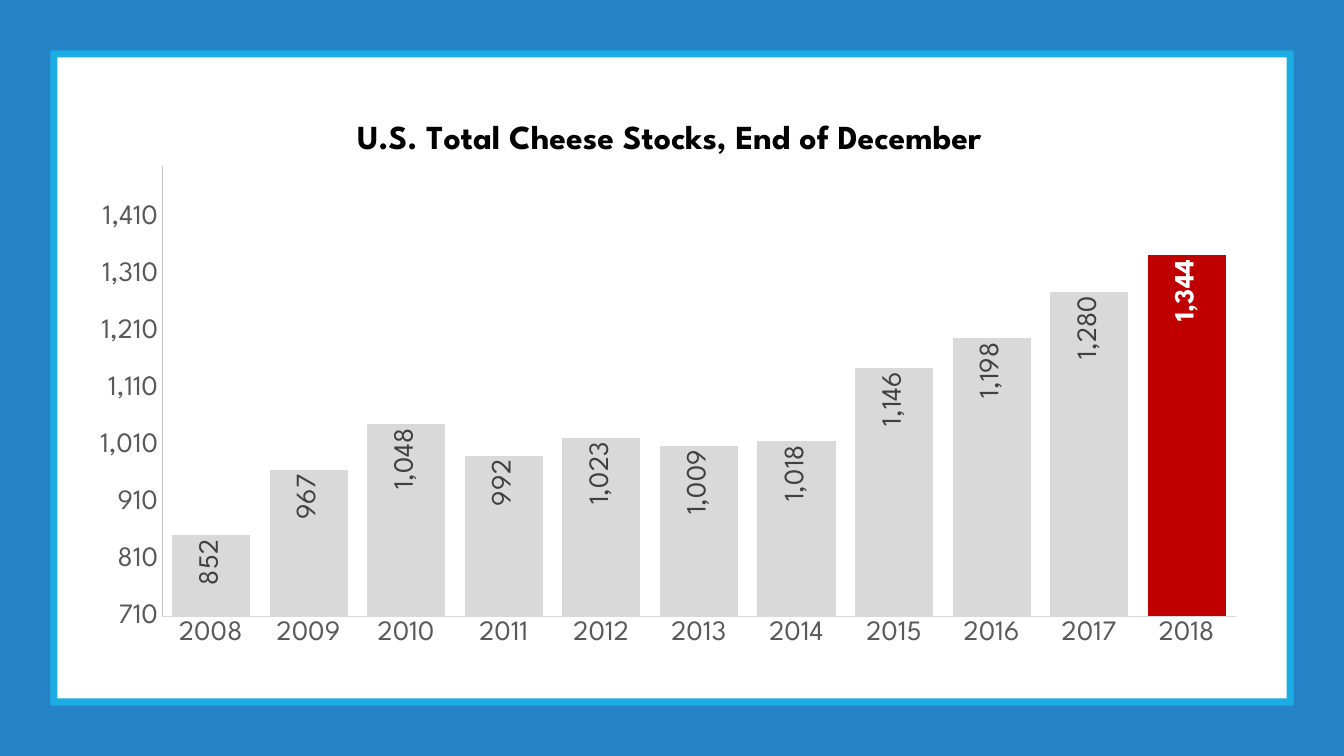
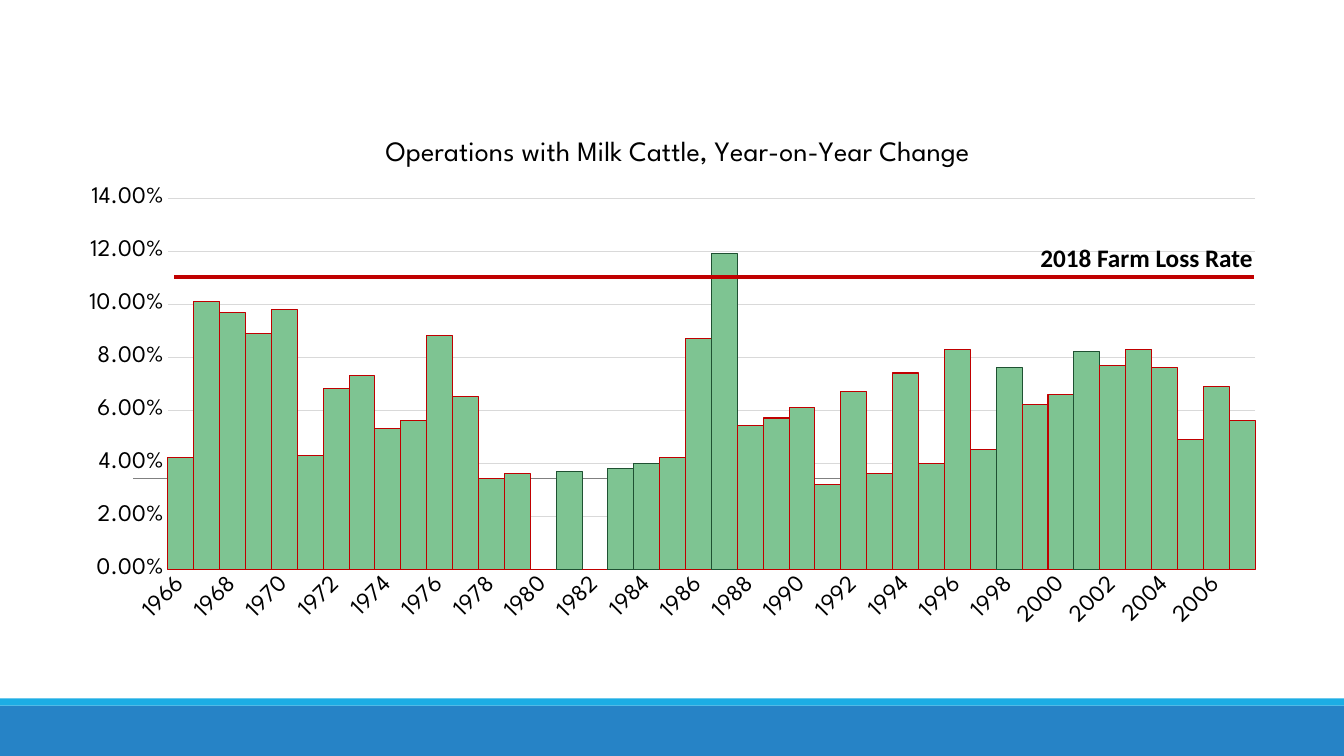
from lxml import etree
from pptx import Presentation
from pptx.chart.data import CategoryChartData
from pptx.dml.color import RGBColor
from pptx.enum import chart as charts, shapes
from pptx.oxml import ns
from pptx.util import Inches, Pt

# Content
CHEESE_YEARS = range(2008, 2019)
CHEESE_STOCKS = [852, 967, 1048, 992, 1023, 1009, 1018, 1146, 1198, 1280, 1344]
FARM_YEARS = range(1966, 2008)
FARM_CHANGE = [
    0.042, 0.101, 0.097, 0.089, 0.098, 0.043, 0.068, 0.073, 0.053, 0.056, 0.088,
    0.065, 0.034, 0.036, 0, 0.037, 0, 0.038, 0.04, 0.042, 0.087, 0.119, 0.054,
    0.057, 0.061, 0.032, 0.067, 0.036, 0.074, 0.04, 0.083, 0.045, 0.076, 0.062,
    0.066, 0.082, 0.077, 0.083, 0.076, 0.049, 0.069, 0.056]
DARK_EDGED_YEARS = [1981, 1983, 1984, 1987, 1998, 2001]

# Shared style
FONT = "League Spartan"
COLORS = {
    "blue": "2683C6", "cyan": "1CADE4", "white": "FFFFFF", "black": "000000",
    "red": "C00000", "bar": "D9D9D9", "green": "7EC492", "dark_green": "1F5132",
    "axis": "BFBFBF", "rule": "808080", "tick": "595959", "label": "404040"}
WIDTH, HEIGHT = 13.33, 7.5


def color(name):
    return RGBColor.from_string(COLORS[name])


def style_font(font, size, tint="black", bold=False, name=FONT):
    font.name, font.size, font.bold = name, Pt(size), bold
    font.color.rgb = color(tint)


def write(frame, text, **style):
    span = frame.paragraphs[0].add_run()
    span.text = text
    style_font(span.font, **style)


def style_line(line, tint, width=0.75):
    line.color.rgb = color(tint)
    line.width = Pt(width)


def add_box(page, left, top, width, height, tint):
    box = page.shapes.add_shape(shapes.MSO_SHAPE.RECTANGLE, Inches(left),
                                Inches(top), Inches(width), Inches(height))
    box.shadow.inherit = False
    box.fill.solid()
    box.fill.fore_color.rgb = color(tint)
    box.line.fill.background()


def add_rule(page, left, right, y, tint, width):
    rule = page.shapes.add_connector(shapes.MSO_CONNECTOR.STRAIGHT, Inches(left),
                                     Inches(y), Inches(right), Inches(y))
    style_line(rule.line, tint, width)
    etree.SubElement(rule.element.spPr, ns.qn("a:effectLst"))


def set_layout(parent, index, inner=False, **fractions):
    """Place a chart part by fractions of the chart's size."""
    for old in parent.findall(ns.qn("c:layout")):
        parent.remove(old)
    layout = etree.Element(ns.qn("c:layout"))
    manual = etree.SubElement(layout, ns.qn("c:manualLayout"))
    settings = {"layoutTarget": "inner"} if inner else {}
    settings.update(xMode="edge", yMode="edge", **fractions)
    for tag, value in settings.items():
        etree.SubElement(manual, ns.qn("c:" + tag)).set("val", str(value))
    parent.insert(index, layout)


def rotate_text(chart, query, degrees):
    for body in chart.element.xpath(query + "//a:bodyPr"):
        body.set("rot", str(degrees * 60000))
        body.set("vert", "horz")


def add_columns(page, area, years, values, title, title_at, plot_at, size,
                title_size, bold, tick, scale, number_format, gap, overlap, fill):
    """Add a one-series column chart; scale is minimum, maximum, step."""
    data = CategoryChartData(number_format=number_format)
    data.categories = [str(year) for year in years]
    data.add_series("Series 1", values)
    chart = page.shapes.add_chart(charts.XL_CHART_TYPE.COLUMN_CLUSTERED,
                                  *map(Inches, area), data).chart
    style_font(chart.font, size)
    chart.has_legend = False

    chart.has_title = True
    write(chart.chart_title.text_frame, title, size=title_size, bold=bold)
    set_layout(chart.element.xpath("c:chart/c:title")[0], 1,
               **dict(zip("xy", title_at)))
    set_layout(chart.element.xpath("c:chart/c:plotArea")[0], 0, inner=True,
               **dict(zip("xywh", plot_at)))

    for axis in (chart.category_axis, chart.value_axis):
        axis.major_tick_mark = axis.minor_tick_mark = charts.XL_TICK_MARK.NONE
        axis.has_major_gridlines = False
        style_font(axis.tick_labels.font, size, tick)
    style_line(chart.category_axis.format.line, "bar")
    axis = chart.value_axis
    axis.minimum_scale, axis.maximum_scale, axis.major_unit = scale
    axis.tick_labels.number_format = number_format
    axis.tick_labels.number_format_is_linked = False

    plot = chart.plots[0]
    plot.vary_by_categories = False
    plot.gap_width, plot.overlap = gap, overlap
    series = plot.series[0]
    series.invert_if_negative = False
    series.format.fill.solid()
    series.format.fill.fore_color.rgb = color(fill)
    return chart, series


def build_cheese(page):
    # Framed white card
    add_box(page, 0, 0, WIDTH, HEIGHT, "blue")
    for inset, tint in ((0.5, "cyan"), (0.57, "white")):
        add_box(page, inset, inset, WIDTH - 2 * inset, HEIGHT - 2 * inset, tint)

    chart, series = add_columns(
        page, (0.79, 0.99, 11.7, 5.51), CHEESE_YEARS, CHEESE_STOCKS,
        "U.S. Total Cheese Stocks, End of December", (0.23, 0.03),
        (0.07, 0.12, 0.91, 0.81), size=20, title_size=24, bold=True,
        tick="tick", scale=(710, 1500, 100), number_format="#,##0", gap=25,
        overlap=-7, fill="bar")
    style_line(chart.value_axis.format.line, "axis")

    # Value labels, with the last year picked out
    labels = series.data_labels
    labels.show_value = True
    labels.number_format, labels.number_format_is_linked = "#,##0", False
    labels.position = charts.XL_LABEL_POSITION.INSIDE_END
    style_font(labels.font, 20, "label")
    last = series.points[len(CHEESE_STOCKS) - 1]
    last.format.fill.solid()
    last.format.fill.fore_color.rgb = color("red")
    style_font(last.data_label.font, 20, "white", bold=True)
    last.data_label.position = charts.XL_LABEL_POSITION.INSIDE_END
    rotate_text(chart, ".//c:dLbls", -90)


def build_farms(page):
    # Footer bands and rule
    add_box(page, 0, 7, WIDTH, 0.5, "blue")
    add_box(page, 0, 6.93, WIDTH, 0.07, "cyan")
    add_rule(page, 1.32, 12.12, 4.75, "rule", 0.5)

    chart, series = add_columns(
        page, (0.64, 1.17, 12.05, 5.17), FARM_YEARS, FARM_CHANGE,
        "Operations with Milk Cattle, Year-on-Year Change", (0.26, 0.03),
        (0.085, 0.154, 0.895, 0.712), size=17, title_size=20, bold=False,
        tick="black", scale=(0, 0.14, 0.02), number_format="0.00%", gap=0,
        overlap=0, fill="green")
    axis = chart.value_axis
    axis.format.line.fill.background()
    axis.has_major_gridlines = True
    style_line(axis.major_gridlines.format.line, "bar")
    style_line(series.format.line, "red")
    for year in DARK_EDGED_YEARS:
        point = series.points[FARM_YEARS.index(year)].format
        point.fill.solid()
        point.fill.fore_color.rgb = color("green")
        style_line(point.line, "dark_green")

    # Every second year, slanted
    rotate_text(chart, ".//c:catAx", -45)
    skip = etree.Element(ns.qn("c:tickLblSkip"), val="2")
    chart.element.xpath(".//c:catAx/c:noMultiLvlLbl")[0].addprevious(skip)

    # Loss rate marker
    add_rule(page, 1.73, 12.44, 2.75, "red", 3.25)
    box = page.shapes.add_textbox(Inches(10.22), Inches(2.35), Inches(3.1), Inches(0.4))
    box.text_frame.word_wrap = True
    write(box.text_frame, "2018 Farm Loss Rate", size=18, bold=True, name="Calibri")


def main():
    deck = Presentation()
    deck.slide_width, deck.slide_height = Inches(WIDTH), Inches(HEIGHT)
    for build in (build_cheese, build_farms):
        build(deck.slides.add_slide(deck.slide_layouts[6]))
    deck.save("out.pptx")


if __name__ == "__main__":
    main()
